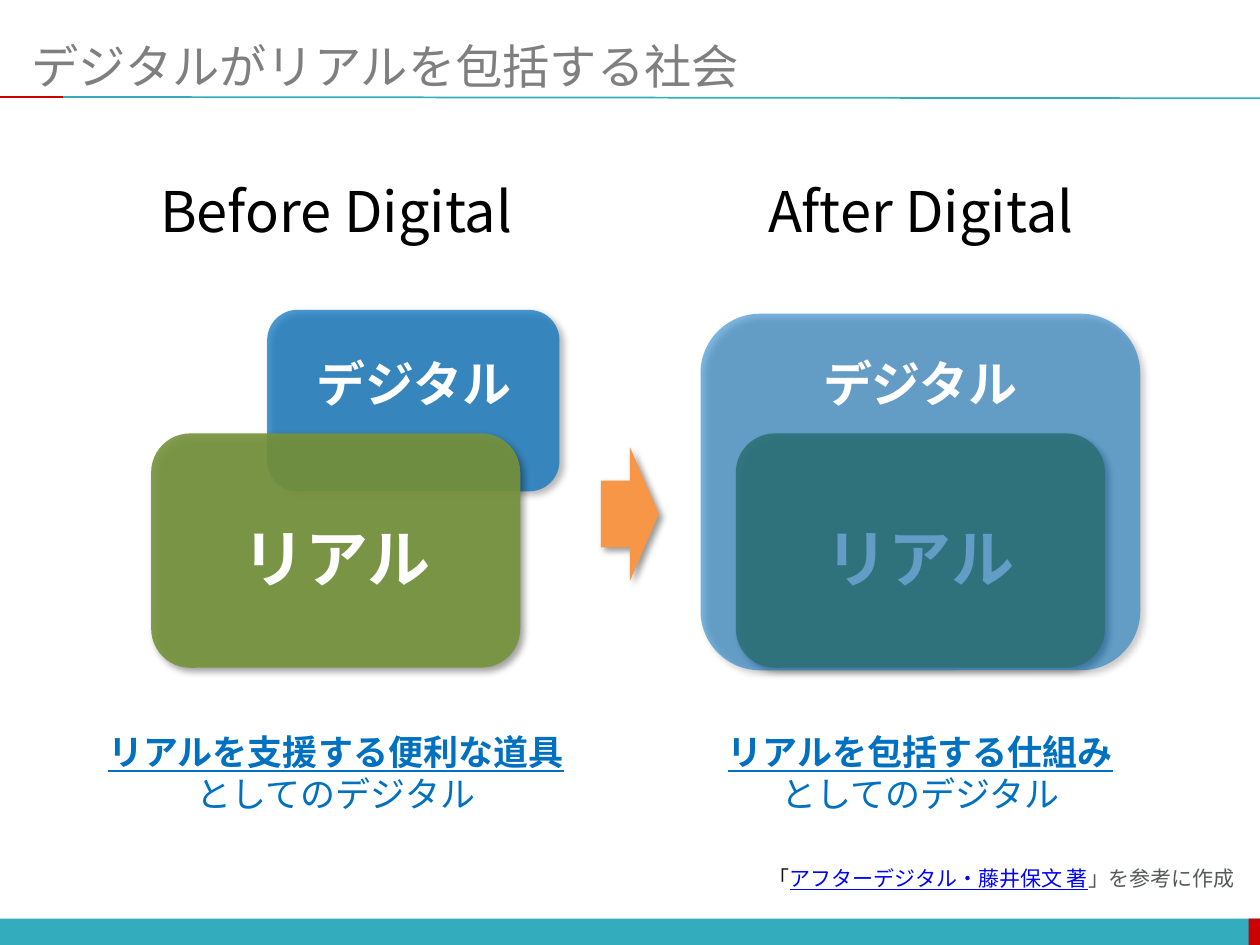
from dataclasses import dataclass

from lxml import etree
from pptx import Presentation
from pptx.dml.color import RGBColor
from pptx.enum.shapes import MSO_CONNECTOR, MSO_SHAPE
from pptx.enum.text import MSO_ANCHOR, MSO_AUTO_SIZE, PP_ALIGN
from pptx.oxml.ns import qn
from pptx.util import Inches, Pt

RECTANGLE = MSO_SHAPE.RECTANGLE
ROUNDED = MSO_SHAPE.ROUNDED_RECTANGLE
ARROW = MSO_SHAPE.RIGHT_ARROW
LEFT, CENTER, RIGHT = PP_ALIGN.LEFT, PP_ALIGN.CENTER, PP_ALIGN.RIGHT


@dataclass(frozen=True)
class Theme:
    font: str = "Noto Sans CJK JP"
    teal: str = "33ACBD"
    red: str = "CC0000"
    blue: str = "0070C0"
    green: str = "77933C"
    orange: str = "F79646"
    gray: str = "7F7F7F"
    white: str = "FFFFFF"
    black: str = "000000"
    quote: str = "0F1111"
    link: str = "0000FF"
    credit: str = "565959"
    title_size: int = 27
    heading_size: int = 32
    real_size: int = 36
    digital_size: int = 28
    caption_size: int = 20
    credit_size: int = 12


theme = Theme()
presentation = Presentation()
presentation.slide_width = Inches(10)
presentation.slide_height = Inches(7.5)
slide = presentation.slides.add_slide(presentation.slide_layouts[5])


def add_block(kind, box, color, opacity=100, shadow=True):
    """Add a filled shape without outline, with an optional soft shadow."""
    shape = slide.shapes.add_shape(kind, *map(Inches, box))
    shape.fill.solid()
    shape.fill.fore_color.rgb = RGBColor.from_string(color)
    shape.line.fill.background()
    shape.shadow.inherit = False
    if opacity < 100:
        fill_color = shape._element.spPr.find(qn("a:solidFill"))[0]
        etree.SubElement(fill_color, qn("a:alpha"), val=str(opacity * 1000))
    if shadow:
        effects = shape._element.spPr.find(qn("a:effectLst"))
        outer = etree.SubElement(
            effects, qn("a:outerShdw"), blurRad=str(Pt(4)), dist=str(Pt(3)),
            dir="2700000", algn="tl", rotWithShape="0")
        shadow_color = etree.SubElement(outer, qn("a:srgbClr"), val=theme.black)
        etree.SubElement(shadow_color, qn("a:alpha"), val="40000")


def write(shape, lines, size, color, align=CENTER, wrap=False):
    """Fill a text shape with (text, emphasis) lines, emphasis being "b" and/or "u"."""
    frame = shape.text_frame
    frame.word_wrap = wrap
    for index, (text, emphasis) in enumerate(lines):
        paragraph = frame.add_paragraph() if index else frame.paragraphs[0]
        paragraph.text = text
        paragraph.alignment = align
        font = paragraph.font
        font.size = Pt(size)
        font.bold = "b" in emphasis
        font.underline = "u" in emphasis
        font.color.rgb = RGBColor.from_string(color)
        font.name = theme.font
        properties = paragraph._p.pPr.find(qn("a:defRPr"))
        etree.SubElement(properties, qn("a:ea"), typeface=theme.font)


# Footer bar and rule under the title
add_block(RECTANGLE, (0, 7.29, 10, 0.22), theme.teal, shadow=False)
add_block(RECTANGLE, (9.91, 7.29, 0.1, 0.22), theme.red, shadow=False)
for start, end, end_y, color in ((0.5, 10, 0.78, theme.teal), (0, 0.5, 0.77, theme.red)):
    rule = slide.shapes.add_connector(
        MSO_CONNECTOR.STRAIGHT, Inches(start), Inches(0.77), Inches(end), Inches(end_y))
    rule.line.color.rgb = RGBColor.from_string(color)
    rule.line.width = Pt(1)
    etree.SubElement(rule._element.spPr, qn("a:effectLst"))

title = slide.shapes.title
title.left, title.top, title.width, title.height = map(Inches, (0.25, 0.29, 9.5, 0.46))
title_frame = title.text_frame
title_frame.auto_size = MSO_AUTO_SIZE.NONE
title_frame.vertical_anchor = MSO_ANCHOR.MIDDLE
title_frame.margin_left = title_frame.margin_right = 0
write(title, [("デジタルがリアルを包括する社会", "")], theme.title_size, theme.gray, LEFT, True)

# Blocks and labels, back to front: the right digital block covers its real block
real = [("リアル", "b")], theme.real_size, theme.white
digital = [("デジタル", "b")], theme.digital_size, theme.white
diagram = (
    (ROUNDED, (2.12, 2.46, 2.32, 1.44), theme.blue, 70, (2.4, 2.76, 1.77, 0.57), digital),
    (ROUNDED, (1.2, 3.44, 2.93, 1.86), theme.green, 91, (1.81, 4.07, 1.72, 0.71), real),
    (ROUNDED, (5.84, 3.44, 2.93, 1.86), theme.green, 91, (6.44, 4.07, 1.72, 0.71), real),
    (ROUNDED, (5.56, 2.49, 3.49, 2.83), theme.blue, 51, (6.42, 2.76, 1.77, 0.57), digital),
)
for kind, box, color, opacity, label_box, label in diagram:
    add_block(kind, box, color, opacity)
    write(slide.shapes.add_textbox(*map(Inches, label_box)), *label)
add_block(ARROW, (4.77, 3.55, 0.46, 1.06), theme.orange)

# Heading above and caption below each side
sides = (
    ("Before Digital", 1.09, 3.16, "リアルを支援する便利な道具", 0.74, 3.85),
    ("After Digital", 5.9, 2.82, "リアルを包括する仕組み", 5.66, 3.29),
)
for heading, heading_left, heading_width, caption, caption_left, caption_width in sides:
    heading_box = slide.shapes.add_textbox(
        Inches(heading_left), Inches(1.35), Inches(heading_width), Inches(0.64))
    write(heading_box, [(heading, "")], theme.heading_size, theme.black)
    caption_box = slide.shapes.add_textbox(
        Inches(caption_left), Inches(5.75), Inches(caption_width), Inches(0.77))
    write(caption_box, [(caption, "bu"), ("としてのデジタル", "")],
          theme.caption_size, theme.blue)

# Source credit
credit_box = slide.shapes.add_textbox(Inches(3.97), Inches(6.82), Inches(5.93), Inches(0.3))
write(credit_box, [("「", "")], theme.credit_size, theme.quote, RIGHT, True)
credit = credit_box.text_frame.paragraphs[0]
for text, color, underline in (
    ("アフターデジタル・藤井保文 著", theme.link, True),
    ("」を参考に作成", theme.credit, False),
):
    run = credit.add_run()
    run.text = text
    run.font.color.rgb = RGBColor.from_string(color)
    run.font.underline = underline

presentation.save("out.pptx")
